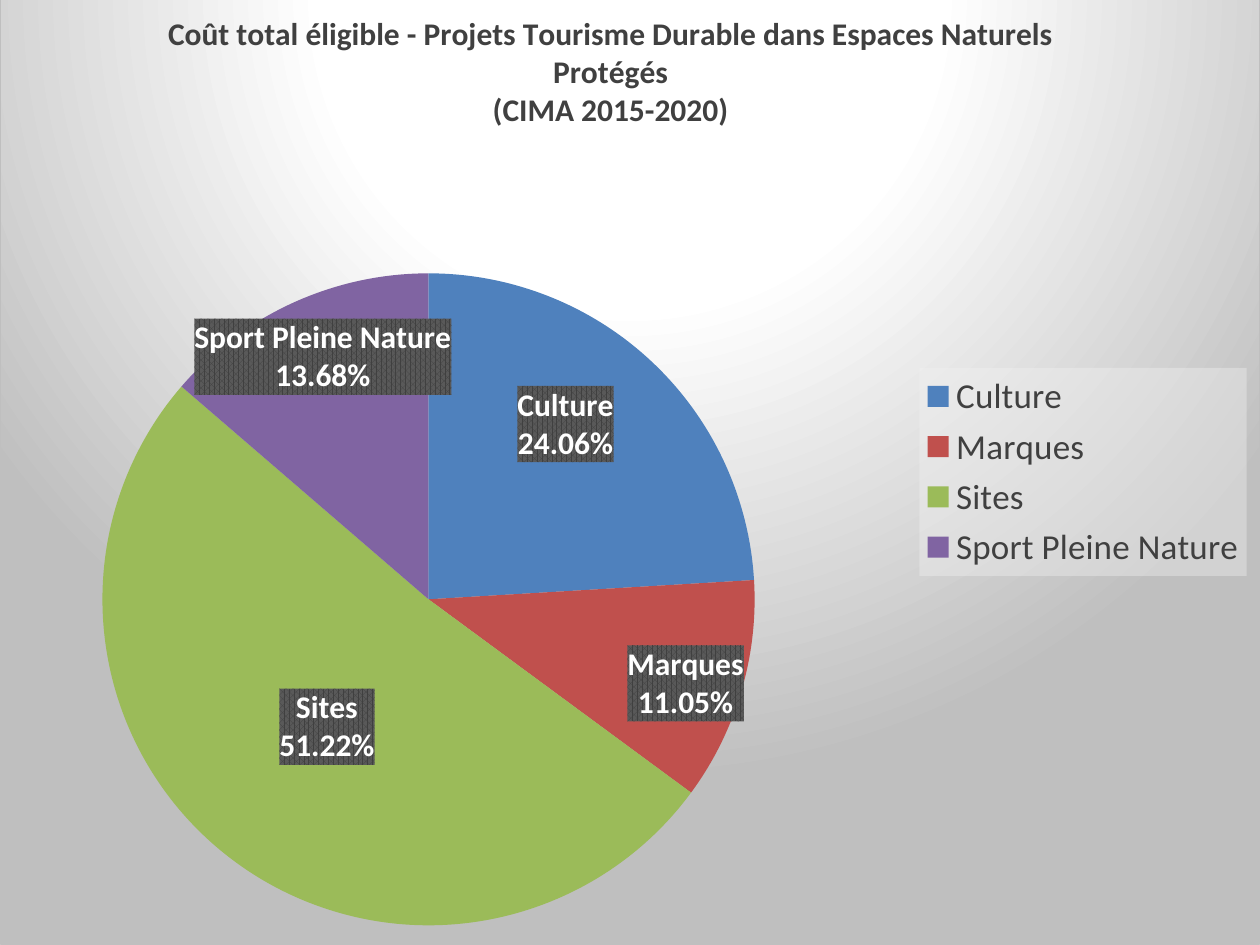
from copy import deepcopy
from dataclasses import dataclass

from lxml import etree
from pptx import Presentation
from pptx.chart.data import CategoryChartData
from pptx.dml.color import RGBColor
from pptx.enum import chart as kinds
from pptx.oxml import parse_xml
from pptx.oxml.ns import qn
from pptx.util import Inches, Pt


@dataclass(frozen=True)
class Theme:
    face: str = "Calibri"
    ink: str = "404040"
    pale: str = "FFFFFF"
    edge: str = "BFBFBF"
    mist: str = "F2F2F2"
    hatch: str = "595959"
    head: int = 18
    key: int = 20


THEME = Theme()
# Sector: name, share, colour, label shift as a fraction of the chart
SECTORS = [
    ("Culture", 24.06, "4F81BD", (0.02, -0.06)),
    ("Marques", 11.05, "C0504D", (0.08, 0.04)),
    ("Sites", 51.22, "9BBB59", None),
    ("Sport Pleine Nature", 13.68, "8064A2", (-0.03, -0.1)),
]
TITLE = [
    "Coût total éligible - Projets Tourisme Durable dans Espaces Naturels Protégés",
    "(CIMA 2015-2020)",
]
NS = ('xmlns:c="http://schemas.openxmlformats.org/drawingml/2006/chart" '
      'xmlns:a="http://schemas.openxmlformats.org/drawingml/2006/main"')


def style(font, size, color, bold=False):
    font.name, font.size, font.bold = THEME.face, Pt(size), bold
    font.color.rgb = RGBColor.from_string(color)


def write(frame, lines, **form):
    for i, line in enumerate(lines):
        para = frame.paragraphs[0] if i == 0 else frame.add_paragraph()
        run = para.add_run()
        run.text = line
        style(run.font, **form)


def paint(color, inner=""):
    return f'<a:srgbClr val="{color}">{inner}</a:srgbClr>'


def props(body):
    return parse_xml(f"<c:spPr {NS}>{body}</c:spPr>")


def layout(x, y, w=None, h=None, edge=True, inner=False):
    body = '<c:layoutTarget val="inner"/>' if inner else ""
    if edge:
        body += '<c:xMode val="edge"/><c:yMode val="edge"/>'
    for tag, val in zip("xywh", (x, y, w, h)):
        if val is not None:
            body += f'<c:{tag} val="{val}"/>'
    return parse_xml(f"<c:layout {NS}><c:manualLayout>{body}</c:manualLayout></c:layout>")


def place(part, after, node):
    """Set the layout of a chart part, behind the named child or first."""
    for old in part.findall(qn("c:layout")):
        part.remove(old)
    if after:
        part.find(qn(after)).addnext(node)
    else:
        part.insert(0, node)


def backdrop(root):
    stops = "".join(f'<a:gs pos="{pos}">{paint(color)}</a:gs>' for pos, color in
                    ((0, THEME.pale), (39000, THEME.pale), (100000, THEME.edge)))
    root.find(qn("c:chart")).addnext(props(
        f'<a:gradFill><a:gsLst>{stops}</a:gsLst><a:path path="circle">'
        '<a:fillToRect l="50000" t="-80000" r="50000" b="180000"/></a:path></a:gradFill>'
        f'<a:ln w="9525"><a:solidFill>{paint(THEME.edge)}</a:solidFill></a:ln>'))


def heading(chart):
    title = chart.chart_title
    write(title.text_frame, TITLE, size=THEME.head, color=THEME.ink, bold=True)
    title.include_in_layout = False
    place(title._element, "c:tx", layout(0.13, 0.01))


def legend(chart):
    chart.has_legend = True
    key = chart.legend
    key.position = kinds.XL_LEGEND_POSITION.RIGHT
    key.include_in_layout = False
    style(key.font, THEME.key, THEME.ink)
    root = key._element
    place(root, "c:legendPos", layout(0.73, 0.39, 0.26, 0.22))
    fade = paint(THEME.mist, '<a:alpha val="39000"/>')
    root.find(qn("c:overlay")).addnext(props(f"<a:solidFill>{fade}</a:solidFill>"))


def labels(series):
    marks = series.data_labels
    marks.show_category_name = marks.show_value = True
    marks.show_percentage = marks.show_legend_key = marks.show_series_name = False
    marks.number_format = '0.00"%"'
    marks.number_format_is_linked = False
    marks.position = kinds.XL_LABEL_POSITION.CENTER
    style(marks.font, THEME.head, THEME.pale, bold=True)
    root = marks._element
    root.find(qn("c:numFmt")).addnext(props(
        f'<a:pattFill prst="pct75"><a:fgClr>{paint(THEME.ink)}</a:fgClr>'
        f'<a:bgClr>{paint(THEME.hatch)}</a:bgClr></a:pattFill>'))
    gap = etree.Element(qn("c:separator"))
    gap.text = "\n"
    root.find(qn("c:showBubbleSize")).addnext(gap)

    # Shifted labels share the common format
    shared = [node for node in root if node.tag != qn("c:showLeaderLines")]
    moved = [(i, row[3]) for i, row in enumerate(SECTORS) if row[3]]
    for spot, (i, shift) in enumerate(moved):
        mark = parse_xml(f'<c:dLbl {NS}><c:idx val="{i}"/></c:dLbl>')
        mark.append(layout(*shift, edge=False))
        for node in shared:
            mark.append(deepcopy(node))
        root.insert(spot, mark)


def pie(slide, x, y, w, h):
    data = CategoryChartData(number_format="0.00")
    data.categories = [row[0] for row in SECTORS]
    data.add_series("Series 1", [row[1] for row in SECTORS])
    chart = slide.shapes.add_chart(kinds.XL_CHART_TYPE.PIE, x, y, w, h, data).chart
    style(chart.font, 10, "000000")
    root = chart._chartSpace
    backdrop(root)
    heading(chart)
    legend(chart)
    place(root.find(".//" + qn("c:plotArea")), None,
          layout(0.08, 0.29, 0.52, 0.69, inner=True))

    # Sectors
    plot = chart.plots[0]
    plot.vary_by_categories = True
    series = plot.series[0]
    for i, row in enumerate(SECTORS):
        fill = series.points[i].format.fill
        fill.solid()
        fill.fore_color.rgb = RGBColor.from_string(row[2])
    labels(series)


def main():
    deck = Presentation()
    deck.slide_width, deck.slide_height = Inches(10), Inches(7.5)
    slide = deck.slides.add_slide(deck.slide_layouts[6])
    pie(slide, Inches(0), Inches(-0.01), Inches(10), Inches(7.51))
    deck.save("out.pptx")


if __name__ == "__main__":
    main()
